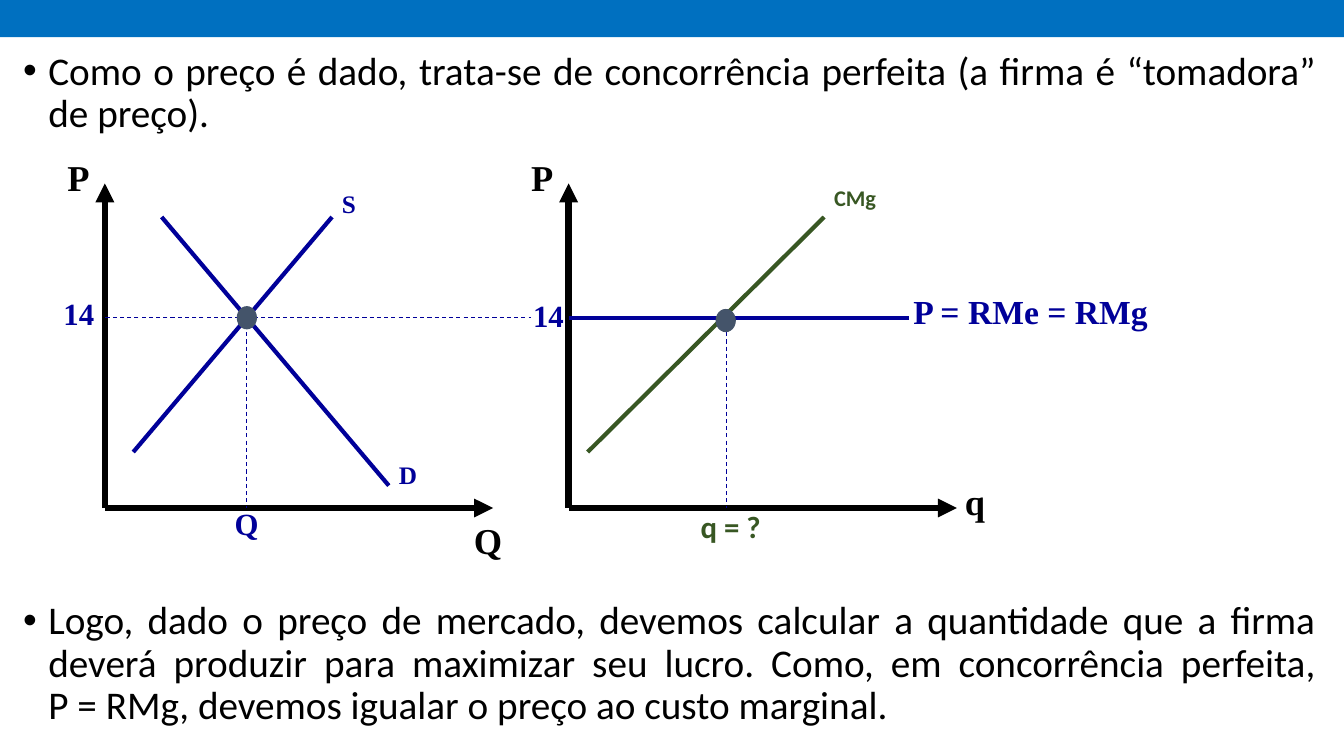
from pptx import Presentation
from pptx.dml.color import RGBColor
from pptx.enum.dml import MSO_LINE
from pptx.enum.shapes import MSO_CONNECTOR, MSO_SHAPE
from pptx.enum.text import MSO_ANCHOR, MSO_AUTO_SIZE, PP_ALIGN
from pptx.oxml.ns import qn
from pptx.util import Inches, Pt
from lxml.etree import SubElement

BLACK, NAVY, GREEN, SLATE, BAND = "000000", "000099", "385723", "44546A", "0070C0"
SERIF, SANS = "Times New Roman", "Calibri"

# Body text: (text, space before in points)
BODY = [
    ("Como o preço é dado, trata-se de concorrência perfeita "
     "(a firma é “tomadora” de preço).", 0),
    ("Logo, dado o preço de mercado, devemos calcular a quantidade que a firma "
     "deverá produzir para maximizar seu lucro. Como, em concorrência perfeita,\v"
     "P = RMg, devemos igualar o preço ao custo marginal.", 332),
]

# Graph grid: columns to the right of and rows above each origin
COL, ROW = 3.38 / 12, 3.22 / 29
ORIGIN_Y = 5.04
AXIS_COLS, AXIS_ROWS, PRICE = 13.67, 29, 17

# lines: from, to, colour; guides: from, to
# labels: text, left column, top row, width in columns, size, font, colour
GRAPHS = [
    {
        "origin_x": 1.04,
        "lines": [((2, 26), (10, 2), NAVY), ((1, 5), (8, 26), NAVY)],
        "guides": [((5, PRICE), (0, PRICE)), ((5, PRICE), (5, 0)),
                   ((5, PRICE), (15, PRICE))],
        "dot": (5, PRICE),
        "labels": [("P", -1.67, 32, 2.3, 26, SERIF, BLACK),
                   ("Q", 12.64, -0.45, 2.3, 26, SERIF, BLACK),
                   ("Q", 4.22, 0.7, 4, 22, SERIF, NAVY),
                   ("S", 8, 29, 2, 18, SERIF, NAVY),
                   ("D", 10, 4.77, 3.3, 18, SERIF, NAVY),
                   ("14", -1.81, 19.54, 2.8, 22, SERIF, NAVY)],
    },
    {
        "origin_x": 5.64,
        "lines": [((0, PRICE), (12, PRICE), NAVY), ((0.67, 5), (9, 26), GREEN)],
        "guides": [((5.57, PRICE), (5.57, 0))],
        "dot": (5.53, 16.75),
        "labels": [("P", -1.67, 32, 2.3, 26, SERIF, BLACK),
                   ("q", 13.6, 3, 4.4, 26, SERIF, BLACK),
                   ("P = RMe = RMg", 11.79, 19.8, 9.9, 24, SERIF, NAVY),
                   ("14", -1.6, 19.36, 2.6, 22, SERIF, NAVY),
                   ("CMg", 9, 29.36, 4, 16, SANS, GREEN),
                   ("q = ?", 4.3, 0.45, 6, 22, SANS, GREEN)],
    },
]


def rgb(value):
    return RGBColor.from_string(value)


def style(p, size, font, color, bold=False):
    for r in p.runs:
        r.font.size, r.font.name, r.font.bold = Pt(size), font, bold
        r.font.color.rgb = rgb(color)


def add_solid(s, kind, x, y, w, h, color):
    sp = s.shapes.add_shape(kind, Inches(x), Inches(y), Inches(w), Inches(h))
    sp.shadow.inherit = False
    sp.fill.solid()
    sp.fill.fore_color.rgb = rgb(color)
    sp.line.color.rgb = rgb(color)
    sp.line.width = Pt(0.75)
    return sp


def add_line(s, start, end, color, width, dashed=False, arrow=False):
    cn = s.shapes.add_connector(MSO_CONNECTOR.STRAIGHT,
                                *(Inches(v) for v in (*start, *end)))
    cn.line.color.rgb = rgb(color)
    cn.line.width = Pt(width)
    if dashed:
        cn.line.dash_style = MSO_LINE.DASH
    if arrow:
        SubElement(cn.line._get_or_add_ln(), qn("a:tailEnd"), type="triangle")
    SubElement(cn._element.spPr, qn("a:effectLst"))


def add_label(s, text, x, y, w, size, font, color):
    sp = s.shapes.add_textbox(Inches(x), Inches(y), Inches(w),
                              Inches(0.1 + size / 60))
    tf = sp.text_frame
    tf.word_wrap = True
    tf.text = text
    style(tf.paragraphs[0], size, font, color, bold=True)


def add_body(sp):
    sp.left, sp.top, sp.width, sp.height = (
        Inches(v) for v in (0.13, 0.46, 13.02, 6.9))
    tf = sp.text_frame
    tf.word_wrap, tf.auto_size = True, MSO_AUTO_SIZE.NONE
    tf.vertical_anchor = MSO_ANCHOR.TOP
    for i, (text, gap) in enumerate(BODY):
        p = tf.add_paragraph() if i else tf.paragraphs[0]
        p.text = text
        p.alignment, p.line_spacing, p.space_before = PP_ALIGN.JUSTIFY, 0.9, Pt(gap)
        pPr = p._p.get_or_add_pPr()
        pPr.set("marL", str(Inches(0.25)))
        pPr.set("indent", str(-Inches(0.25)))
        SubElement(pPr, qn("a:buFont"), typeface="Arial")
        SubElement(pPr, qn("a:buChar"), char="•")
        style(p, 28, SANS, BLACK)


def add_graph(s, graph):
    def at(col, row):
        return graph["origin_x"] + col * COL, ORIGIN_Y - row * ROW

    for tip in ((0, AXIS_ROWS), (AXIS_COLS, 0)):
        add_line(s, at(0, 0), at(*tip), BLACK, 4.5, arrow=True)
    for start, end, color in graph["lines"]:
        add_line(s, at(*start), at(*end), color, 3)
    for start, end in graph["guides"]:
        add_line(s, at(*start), at(*end), NAVY, 0.75, dashed=True)
    x, y = at(*graph["dot"])
    add_solid(s, MSO_SHAPE.OVAL, x - 0.095, y - 0.11, 0.19, 0.22, SLATE)
    for text, col, row, cols, size, font, color in graph["labels"]:
        add_label(s, text, *at(col, row), cols * COL, size, font, color)


def main():
    prs = Presentation()
    prs.slide_width, prs.slide_height = Inches(13.33), Inches(7.5)
    s = prs.slides.add_slide(prs.slide_layouts[1])
    title = s.shapes.title._element
    title.getparent().remove(title)

    # Top band
    band = add_solid(s, MSO_SHAPE.RECTANGLE, 0, -0.03, 13.33, 0.4, BAND)
    band.line.fill.background()

    # Text above and below the graphs
    add_body(s.placeholders[1])

    # Market on the left, firm on the right
    for graph in GRAPHS:
        add_graph(s, graph)
    prs.save("out.pptx")


if __name__ == "__main__":
    main()
